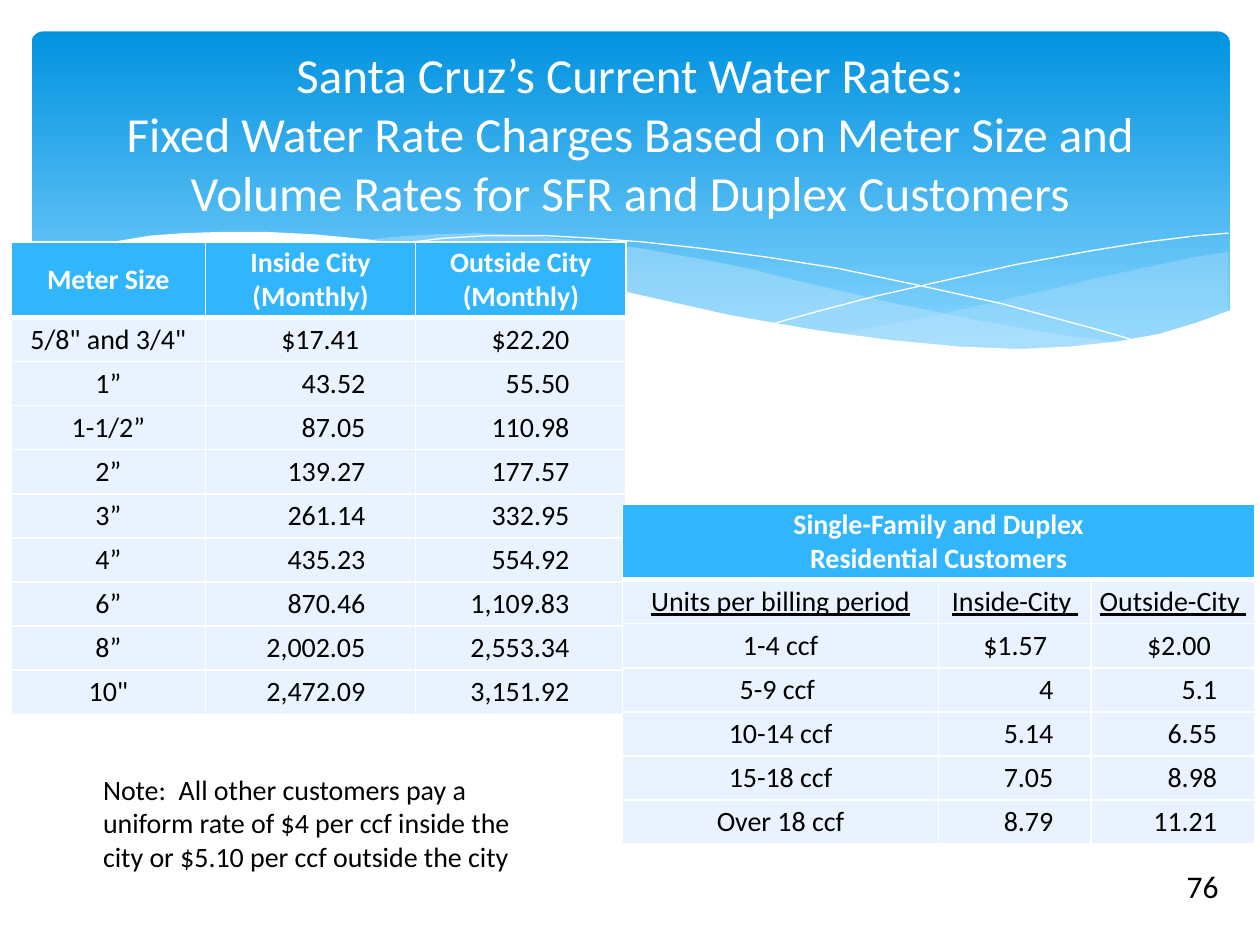
from lxml.etree import SubElement
from pptx import Presentation
from pptx.dml.color import RGBColor
from pptx.enum.shapes import MSO_SHAPE
from pptx.enum.text import MSO_ANCHOR, MSO_AUTO_SIZE, PP_ALIGN
from pptx.oxml.ns import qn
from pptx.util import Pt

COLORS = {
    "white": "FFFFFF",
    "black": "000000",
    "banner_top": "0293E0",
    "banner_bottom": "83D3FE",
    "wave": "C6E7FC",
    "header": "31B6FD",
    "row": "E8F3FF",
}
FONT = "Calibri"
WAVE_UNIT = Pt(0.72)

RIGHT_WAVE = [
    (950, 175), (923, 179), (896, 185), (866, 191), (836, 198), (807, 205),
    (754, 217), (704, 228), (658, 237), (636, 240), (666, 244), (694, 247),
    (732, 250), (778, 253), (810, 252), (847, 250), (880, 245), (910, 238),
    (938, 227), (950, 222),
]
MIDDLE_WAVE = [
    (868, 248), (812, 240), (750, 229), (681, 215), (604, 197), (573, 189),
    (544, 183), (516, 178), (489, 173), (440, 166), (395, 162), (355, 160),
    (319, 161), (288, 163), (261, 166), (298, 171), (337, 178), (379, 186),
    (424, 197), (505, 215), (559, 227), (609, 236), (655, 241), (697, 247),
    (736, 250), (772, 252), (803, 253), (843, 252),
]
FALLING_LINE = [
    (284, 170), (303, 167), (328, 164), (362, 162), (408, 162), (444, 164),
    (485, 167), (531, 172), (583, 179), (640, 188), (702, 201), (770, 216),
    (844, 236), (882, 247),
]
RISING_LINE = [
    (588, 232), (628, 221), (670, 210), (723, 198), (781, 185), (841, 174),
    (885, 167), (926, 162), (950, 160),
]
WHITE_WAVE = [
    (952, 221), (925, 231), (895, 240), (862, 246), (825, 250), (784, 252),
    (736, 250), (683, 245), (623, 237), (554, 225), (478, 208), (422, 195),
    (366, 182), (315, 172), (267, 165), (225, 161), (186, 159), (152, 159),
    (121, 160), (94, 162), (70, 166), (51, 170), (34, 174), (21, 178),
    (11, 182), (0, 187), (-2, 188), (-2, 304), (952, 304),
]

METER_HEADER = [["Meter Size"], ["Inside City (Monthly)"], ["Outside City", "(Monthly)"]]
METER_RATES = [
    ('5/8" and 3/4"', "$17.41 ", "$22.20 "),
    ("1”", "43.52", "55.50 "),
    ("1-1/2”", "87.05", "110.98 "),
    ("2”", "139.27", "177.57 "),
    ("3”", "261.14", "332.95 "),
    ("4”", "435.23", "554.92 "),
    ("6”", "870.46", "1,109.83 "),
    ("8”", "2,002.05", "2,553.34 "),
    ('10"', "2,472.09", "3,151.92 "),
]
VOLUME_HEADER = [["Single-Family and Duplex", "Residential Customers"]]
VOLUME_COLUMNS = ("Units per billing period", "Inside-City ", "Outside-City ")
VOLUME_RATES = [
    ("1-4 ccf", "$1.57 ", "$2.00 "),
    ("5-9 ccf ", "4", "5.1"),
    ("10-14 ccf", "5.14", "6.55"),
    ("15-18 ccf", "7.05", "8.98"),
    ("Over 18 ccf", "8.79", "11.21"),
]


def rgb(name):
    return RGBColor.from_string(COLORS[name])


def add_run(paragraph, text, size, color, bold=False, underline=False):
    run = paragraph.add_run()
    run.text = text
    font = run.font
    font.name, font.size, font.bold = FONT, Pt(size), bold
    font.underline = underline
    font.color.rgb = rgb(color)


def add_curve(slide, left, top, points, close, opacity=100):
    builder = slide.shapes.build_freeform(*points[0], scale=WAVE_UNIT)
    builder.add_line_segments(points[1:], close=close)
    curve = builder.convert_to_shape(Pt(left), Pt(top))
    curve.shadow.inherit = False
    if not close:
        curve.fill.background()
        curve.line.color.rgb = rgb("white")
        curve.line.width = Pt(0)
        return
    curve.line.fill.background()
    curve.fill.solid()
    curve.fill.fore_color.rgb = rgb("white" if opacity == 100 else "wave")
    if opacity < 100:
        color = curve.fill._xPr.find(".//" + qn("a:srgbClr"))
        SubElement(color, qn("a:alpha"), val=str(opacity * 1000))


def add_banner(slide, left, top, width, height):
    panel = slide.shapes.add_shape(
        MSO_SHAPE.ROUNDED_RECTANGLE, Pt(left), Pt(top), Pt(width), Pt(height))
    panel.adjustments[0] = 0.034
    panel.shadow.inherit = False
    panel.line.fill.background()
    panel.fill.gradient()
    panel.fill.gradient_angle = 270
    stops = zip(panel.fill.gradient_stops, (0, 0.9), ("banner_top", "banner_bottom"))
    for stop, position, color in stops:
        stop.position = position
        stop.color.rgb = rgb(color)
    add_curve(slide, left, top, RIGHT_WAVE, True, 29)
    add_curve(slide, left, top, MIDDLE_WAVE, True, 40)
    add_curve(slide, left, top, FALLING_LINE, False)
    add_curve(slide, left, top, RISING_LINE, False)
    add_curve(slide, left, top, WHITE_WAVE, True)


def place_title(slide, left, top, width, height):
    title = slide.shapes.title
    title.left, title.top, title.width, title.height = map(Pt, (left, top, width, height))
    title._element.getparent().append(title._element)
    frame = title.text_frame
    frame.auto_size = MSO_AUTO_SIZE.NONE
    frame.vertical_anchor = MSO_ANCHOR.MIDDLE
    heading = frame.paragraphs[0]
    heading.alignment = PP_ALIGN.CENTER
    add_run(heading, "Santa Cruz’s Current Water Rates:", 28, "white")
    heading.add_line_break()
    SubElement(heading._p.find(qn("a:br")), qn("a:rPr"), sz="2800")
    add_run(heading, "Fixed Water Rate Charges Based on Meter Size and "
            "Volume Rates for SFR and Duplex Customers", 28, "white")


def set_borders(cell, bottom):
    properties = cell._tc.get_or_add_tcPr()
    for side, width in (("L", 1), ("R", 1), ("T", 1), ("B", bottom)):
        border = SubElement(properties, qn("a:ln" + side), w=str(Pt(width)))
        fill = SubElement(border, qn("a:solidFill"))
        SubElement(fill, qn("a:srgbClr"), val=COLORS["white"])


def fill_cell(cell, lines, margins, header=False, align=PP_ALIGN.CENTER, underline=False):
    set_borders(cell, 3 if header else 1)
    cell.fill.solid()
    cell.fill.fore_color.rgb = rgb("header" if header else "row")
    cell.vertical_anchor = MSO_ANCHOR.MIDDLE
    cell.margin_left, cell.margin_top, cell.margin_right, cell.margin_bottom = map(Pt, margins)
    frame = cell.text_frame
    for index, line in enumerate(lines):
        paragraph = frame.add_paragraph() if index else frame.paragraphs[0]
        paragraph.alignment = align
        add_run(paragraph, line, 16, "white" if header else "black", header, underline)


def add_rates(slide, left, top, widths, header, header_margins, rates, right_margin, columns=None):
    body = ([columns] if columns else []) + rates
    header_height, row_height = 43.2, 25.2
    table = slide.shapes.add_table(
        len(body) + 1, len(widths), Pt(left), Pt(top), Pt(sum(widths)),
        Pt(header_height + row_height * len(body))).table
    table.horz_banding = False
    for column, width in zip(table.columns, widths):
        column.width = Pt(width)
    for index, row in enumerate(table.rows):
        row.height = Pt(row_height if index else header_height)
    if len(header) == 1:
        table.cell(0, 0).merge(table.cell(0, len(widths) - 1))
    for column, lines in enumerate(header):
        fill_cell(table.cell(0, column), lines, header_margins, header=True)
    for row, values in enumerate(body, 1):
        for column, value in enumerate(values):
            labels = values is columns
            amount = column > 0 and not labels
            fill_cell(table.cell(row, column), [value],
                      (3.6, 1.4, right_margin if amount else 3.6, 1.4),
                      align=PP_ALIGN.RIGHT if amount else PP_ALIGN.CENTER,
                      underline=labels)


def add_text(slide, left, top, width, height, text, size, wrap):
    box = slide.shapes.add_textbox(Pt(left), Pt(top), Pt(width), Pt(height))
    frame = box.text_frame
    frame.word_wrap = wrap
    frame.auto_size = MSO_AUTO_SIZE.SHAPE_TO_FIT_TEXT
    add_run(frame.paragraphs[0], text, size, "black")


def main():
    deck = Presentation()
    deck.slide_width, deck.slide_height = Pt(720), Pt(540)
    slide = deck.slides.add_slide(deck.slide_layouts[5])
    add_banner(slide, 18, 18, 684.7, 194.4)
    add_text(slide, 671, 491.8, 33.1, 28.8, "76", 18, False)
    place_title(slide, 36, 26.6, 648, 98.6)
    add_rates(slide, 6.5, 138.2, (110.9, 120.2, 120.2), METER_HEADER,
              (0.7, 0.7, 0.7, 0), METER_RATES, 28.8)
    add_rates(slide, 355.7, 288, (180.7, 87.1, 93.6), VOLUME_HEADER,
              (3.6, 1.4, 3.6, 1.4), VOLUME_RATES, 21.6, VOLUME_COLUMNS)
    add_text(slide, 51.8, 437.8, 260.6, 65.5,
             "Note:  All other customers pay a uniform rate of $4 per ccf "
             "inside the city or $5.10 per ccf outside the city", 16, True)
    deck.save("out.pptx")


if __name__ == "__main__":
    main()
